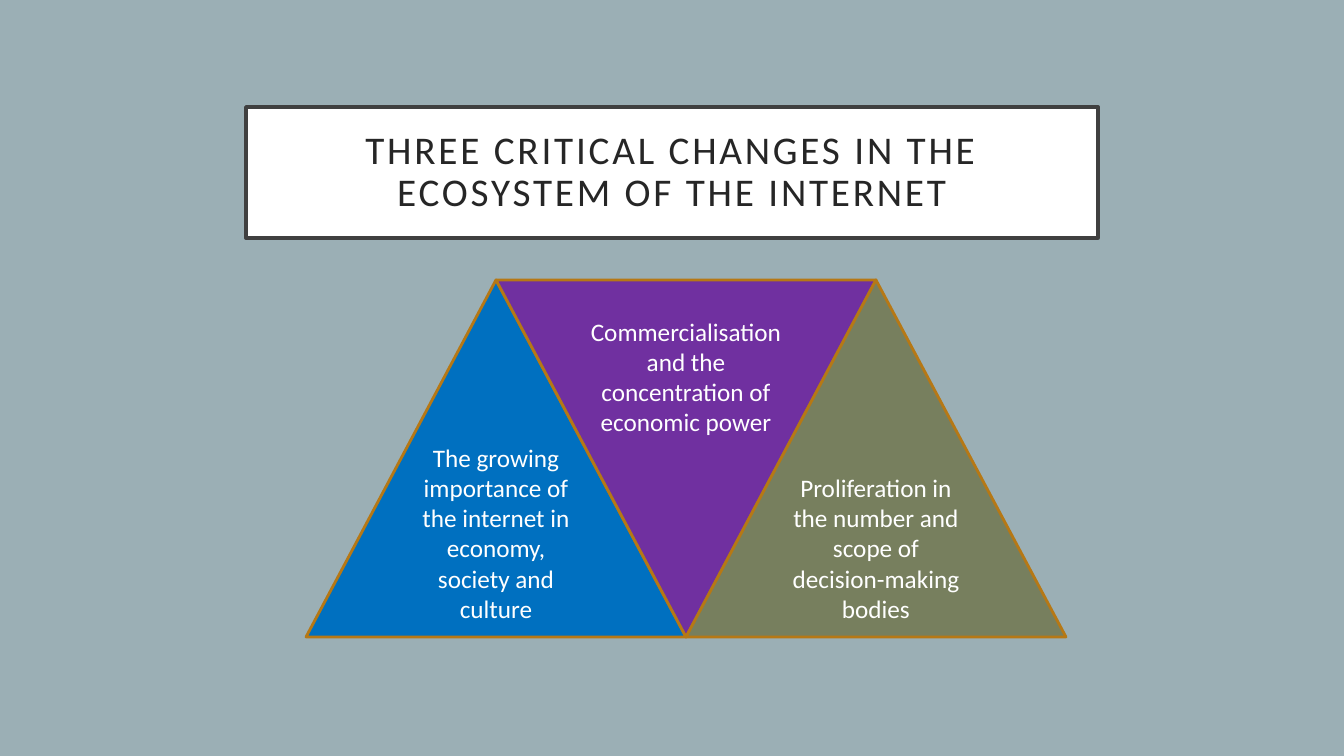
import pptx
import pptx.util
import pptx.dml.color
import pptx.enum.shapes
import pptx.enum.text

COLORS = {
    "background": "9BAFB5", "white": "FFFFFF", "frame": "404040",
    "title": "262626", "edge": "B67815",
    "blue": "0070C0", "purple": "7030A0", "olive": "777F5E",
}
SLIDE_WIDTH, SLIDE_HEIGHT = 1344, 756
EMU_PER_PX = 12192000 / SLIDE_WIDTH


def px(*lengths):
    return [pptx.util.Emu(round(length * EMU_PER_PX)) for length in lengths]


def write_text(shape, text, size=18, color="white", spacing=0, line_spacing=None,
               anchor="MIDDLE", margins=(10, 5, 10, 5), auto_size="NONE"):
    frame = shape.text_frame
    frame.word_wrap = True
    frame.auto_size = getattr(pptx.enum.text.MSO_AUTO_SIZE, auto_size)
    frame.vertical_anchor = getattr(pptx.enum.text.MSO_ANCHOR, anchor)
    (frame.margin_left, frame.margin_top,
     frame.margin_right, frame.margin_bottom) = px(*margins)
    paragraph = frame.paragraphs[0]
    paragraph.alignment = pptx.enum.text.PP_ALIGN.CENTER
    paragraph.line_spacing = line_spacing
    run = paragraph.add_run()
    run.text = text
    run.font.name = "Calibri"
    run.font.size = pptx.util.Pt(size)
    run.font.color.rgb = pptx.dml.color.RGBColor.from_string(COLORS[color])
    if spacing:
        run.font._element.set("spc", str(spacing * 100))


presentation = pptx.Presentation()
presentation.slide_width, presentation.slide_height = px(SLIDE_WIDTH, SLIDE_HEIGHT)
slide = presentation.slides.add_slide(presentation.slide_layouts[5])
slide.background.fill.solid()
slide.background.fill.fore_color.rgb = pptx.dml.color.RGBColor.from_string(COLORS["background"])

# Framed title
title = slide.shapes.title
title.left, title.top, title.width, title.height = px(246, 107, 852, 131)
title.fill.solid()
title.fill.fore_color.rgb = pptx.dml.color.RGBColor.from_string(COLORS["white"])
title.line.color.rgb = pptx.dml.color.RGBColor.from_string(COLORS["frame"])
title.line.width = pptx.util.Pt(2.5)
write_text(title, "THREE CRITICAL CHANGES IN THE ECOSYSTEM OF THE INTERNET",
           size=28, color="title", spacing=2, line_spacing=0.9, margins=(20, 20, 20, 20))

# Row of interlocking triangles, each half a base further right
BASE, HEIGHT, LEFT, TOP = 380, 357, 306, 280
triangles = [
    ("blue", 0, "The growing importance of the internet in economy, society and culture", 35),
    ("purple", 180, None, 5),
    ("olive", 0, "Proliferation in the number and scope of decision-making bodies", 5),
]
for index, (color, rotation, text, bottom_margin) in enumerate(triangles):
    triangle = slide.shapes.add_shape(
        pptx.enum.shapes.MSO_SHAPE.ISOSCELES_TRIANGLE,
        *px(LEFT + index * BASE // 2, TOP, BASE, HEIGHT))
    triangle.shadow.inherit = False
    triangle.rotation = rotation
    triangle.fill.solid()
    triangle.fill.fore_color.rgb = pptx.dml.color.RGBColor.from_string(COLORS[color])
    triangle.line.color.rgb = pptx.dml.color.RGBColor.from_string(COLORS["edge"])
    triangle.line.width = pptx.util.Pt(2)
    if text:
        write_text(triangle, text, margins=(10, 5, 10, bottom_margin))

# Upright label over the inverted triangle
label = slide.shapes.add_textbox(*px(566, 311, 240, 131))
write_text(label, "Commercialisation and the concentration of economic power",
           anchor="TOP", auto_size="SHAPE_TO_FIT_TEXT")

presentation.save("out.pptx")
